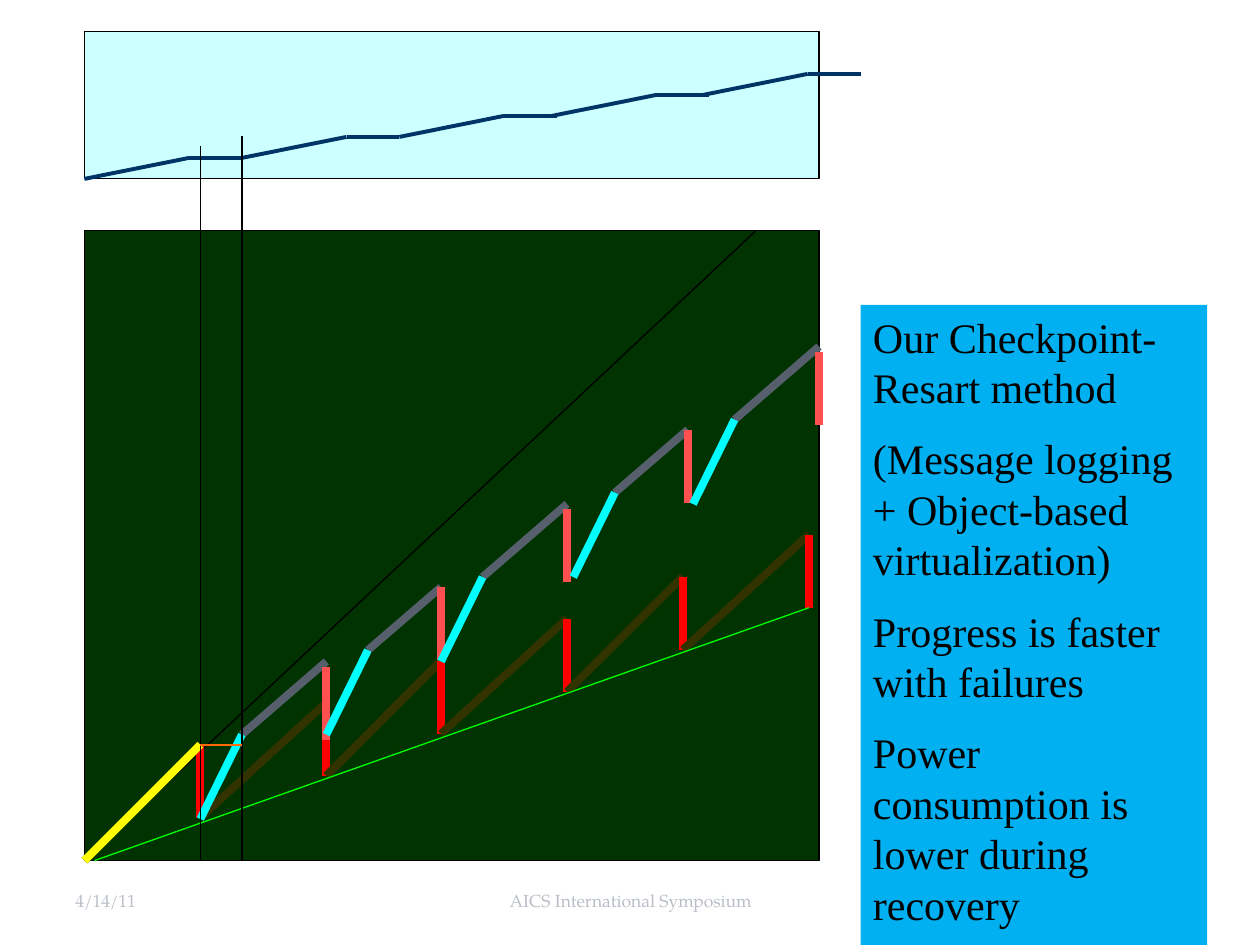
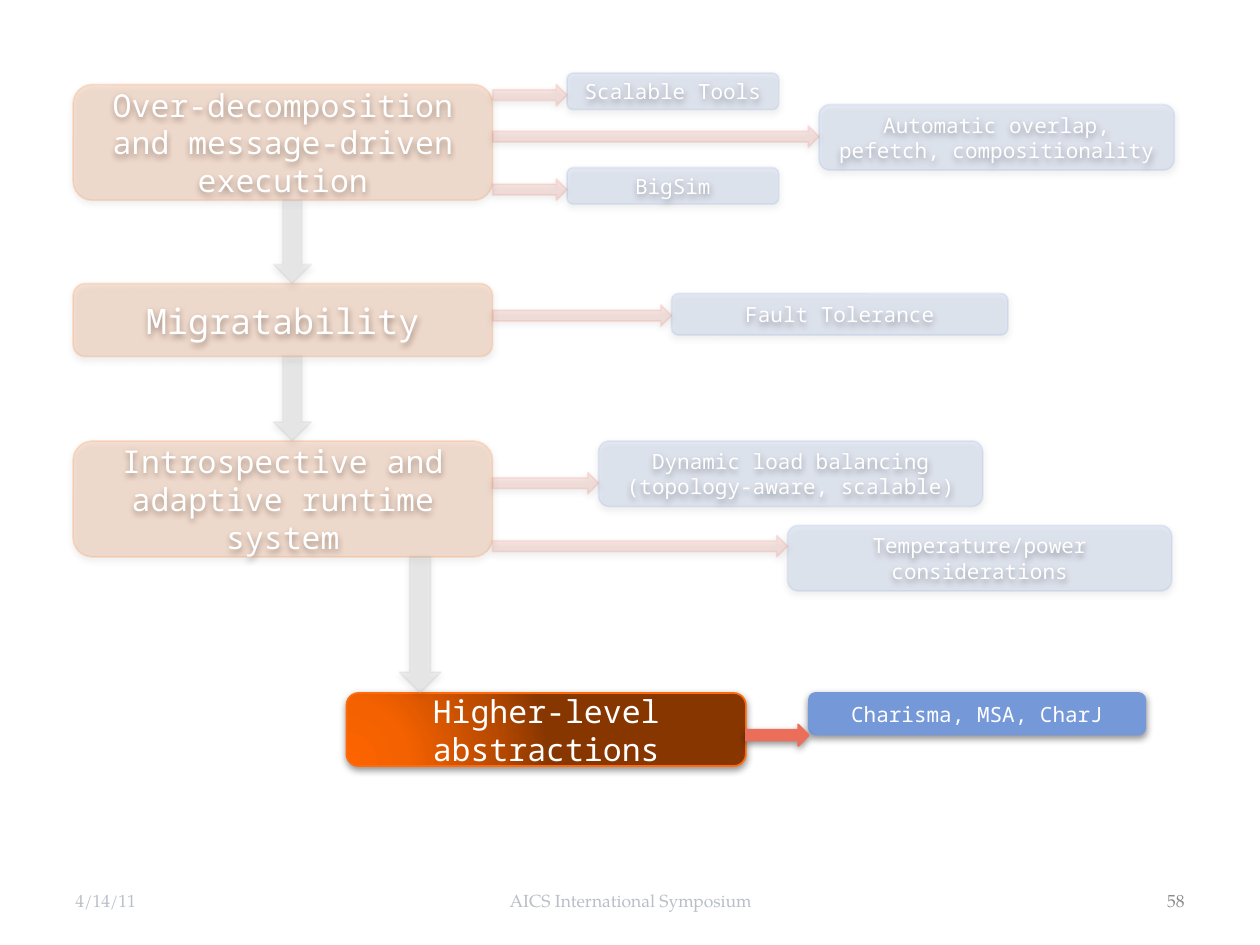
from collections import namedtuple

from lxml import etree
from pptx import Presentation
from pptx.dml.color import RGBColor
from pptx.enum.shapes import MSO_CONNECTOR, MSO_SHAPE
from pptx.enum.text import MSO_ANCHOR, MSO_AUTO_SIZE, PP_ALIGN
from pptx.oxml.ns import qn
from pptx.util import Inches, Pt

STRAIGHT = MSO_CONNECTOR.STRAIGHT
RECTANGLE = MSO_SHAPE.RECTANGLE
ROUNDED = MSO_SHAPE.ROUNDED_RECTANGLE
DOWN_ARROW, RIGHT_ARROW = MSO_SHAPE.DOWN_ARROW, MSO_SHAPE.RIGHT_ARROW
LEFT, CENTER, RIGHT = PP_ALIGN.LEFT, PP_ALIGN.CENTER, PP_ALIGN.RIGHT
TOP, MIDDLE = MSO_ANCHOR.TOP, MSO_ANCHOR.MIDDLE
GROW = MSO_AUTO_SIZE.SHAPE_TO_FIT_TEXT

COLORS = {
    "black": "000000", "white": "FFFFFF", "footer": "B9BEC7", "number": "8C8C8C",
    "field": "003300", "sky": "CCFFFF", "power": "003366", "note": "00B0F0",
    "lost work": "333300", "failure": "FF0000", "trend": "00FF00",
    "first run": "FFFF00", "recovery": "00FFFF", "progress": "575F6D",
    "fast failure": "FF5050", "orange": "FF6B0A", "stage": "E75C01",
    "topic": "7598D9", "next": "ADB0B5", "branch": "EB6E5A",
}
MONO, PAGELLA, TIMES = "Noto Sans Mono", "TeX Gyre Pagella", "Times New Roman"
FADED = 15
SHADOW = {"blurRad": Pt(4), "dist": Pt(1.6), "dir": 90 * 60000, "rotWithShape": 0}
HIGHLIGHT_STOPS = [(0, "FD6400"), (30, "F46100"), (75, "B74900"), (100, "873600")]
HIGHLIGHT_CENTER = {"l": 5, "t": 100, "r": 120, "b": 10}

Box = namedtuple("Box", "left top width height")
Topic = namedtuple("Topic", "text arrow_top box")
Stage = namedtuple("Stage", "text size box topics")

PROGRESS_BOX = Box(0.67, 1.83, 5.83, 5)
POWER_BOX = Box(0.67, 0.25, 5.83, 1.17)
NOTE_BOX = Box(6.83, 2.42, 2.75, 5.09)
DIAGRAM_BOX = Box(0.58, 0.58, 8.74, 5.5)

NOTES = [
    "Our Checkpoint-Resart method",
    "(Message logging + Object-based virtualization)",
    "Progress is faster with failures",
    "Power consumption is lower during recovery",
]
DROP = 0.58
FAILURE_TIMES = [0.92, 1.92, 2.83, 3.83, 4.75, 5.75]
# start time, start height, peak time, peak height, gap below the peak
FAST_CYCLES = [
    (0.92, 0.33, 1.92, 1.58, 0.04),
    (1.92, 1.00, 2.83, 2.17, 0),
    (2.83, 1.58, 3.83, 2.83, 0.04),
    (3.88, 2.25, 4.79, 3.42, 0),
    (4.83, 2.83, 5.83, 4.08, 0.04),
]
POWER_STARTS = [0, 1.25, 2.5, 3.71, 4.91]

# Boxes and arrow tops are measured from the corner of the diagram.
STAGES = [
    Stage("Over-decomposition and message-driven execution", 18,
          Box(0, 0.09, 3.33, 0.92), [
              Topic("Scalable Tools", 0.09, Box(3.92, 0, 1.68, 0.29)),
              Topic("Automatic overlap, pefetch, compositionality", 0.42,
                    Box(5.92, 0.25, 2.82, 0.52)),
              Topic("BigSim", 0.84, Box(3.92, 0.75, 1.68, 0.29))]),
    Stage("Migratability", 20, Box(0, 1.67, 3.33, 0.58), [
        Topic("Fault Tolerance", 1.84, Box(4.75, 1.75, 2.67, 0.33))]),
    Stage("Introspective and adaptive runtime system", 18,
          Box(0, 2.92, 3.33, 0.92), [
              Topic("Dynamic load balancing (topology-aware, scalable)", 3.17,
                    Box(4.17, 2.92, 3.05, 0.52)),
              Topic("Temperature/power considerations", 3.67,
                    Box(5.67, 3.59, 3.05, 0.52))]),
    Stage("Higher-level abstractions", 18, Box(2.17, 4.92, 3.17, 0.58), [
        Topic("Charisma, MSA, CharJ", 5.17, Box(5.84, 4.92, 2.67, 0.33))]),
]
NEXT_ARROWS = [(1.59, 0.3), (1.59, 0.3), (2.59, 0.33)]


def rgb(name):
    return RGBColor.from_string(COLORS[name])


def in_inches(box):
    return [Inches(length) for length in box]


def shifted(box, outer):
    return box._replace(left=outer.left + box.left, top=outer.top + box.top)


def add_element(parent, tag, **values):
    child = etree.SubElement(parent, qn(tag))
    for name, value in values.items():
        child.set(name, str(value))
    return child


def write(shape, texts, color, font, align=LEFT, anchor=MIDDLE, gap=0):
    frame = shape.text_frame
    frame.word_wrap = True
    frame.vertical_anchor = anchor
    for index, text in enumerate(texts):
        para = frame.paragraphs[0] if index == 0 else frame.add_paragraph()
        para.alignment = align
        if index:
            para.space_before = Pt(gap)
        span = para.add_run()
        span.text = text
        for name, value in font.items():
            setattr(span.font, name, value)
        span.font.color.rgb = rgb(color)


def add_block(page, kind, box, fill, line=None, weight=0.75):
    shape = page.shapes.add_shape(kind, *in_inches(box))
    shape.shadow.inherit = False
    shape.fill.solid()
    shape.fill.fore_color.rgb = rgb(fill)
    if line:
        shape.line.color.rgb = rgb(line)
        shape.line.width = Pt(weight)
    else:
        shape.line.fill.background()
    return shape


def plotter(page, box):
    """Return a function that draws lines between points measured from the
    lower left corner of the box, with heights counted upwards."""
    def place(point):
        across, up = point
        return Inches(box.left + across), Inches(box.top + box.height - up)

    def draw(start, end, color, weight):
        line = page.shapes.add_connector(STRAIGHT, *place(start), *place(end))
        line.line.color.rgb = rgb(color)
        line.line.width = Pt(weight)
        add_element(line.element.spPr, "a:effectLst")
    return draw


def add_progress(page, box):
    add_block(page, RECTANGLE, box, "field", "black")
    draw = plotter(page, box)
    draw((0, 0), (5.33, box.height), "black", 0.75)
    start = (0, 0)
    for index, time in enumerate(FAILURE_TIMES):
        peak = 0.92 + index / 3
        draw(start, (time, peak), "lost work", 4.5)
        start = (time, peak - DROP)
        draw(start, (time, peak), "failure", 4.5)
    draw((0.08, 0), start, "trend", 0.75)
    draw((0, 0), (0.92, 0.92), "first run", 4.5)
    for begin, low, end, high, gap in FAST_CYCLES:
        recovered = (begin + 0.33, low + 0.67)
        draw(recovered, (end, high), "progress", 4.5)
        draw((end, high - gap - DROP), (end, high - gap), "fast failure", 4.5)
        draw((begin, low), recovered, "recovery", 4.5)


def add_power(page, box):
    add_block(page, RECTANGLE, box, "sky", "black")
    draw = plotter(page, box)
    for index, start in enumerate(POWER_STARTS):
        low, high = index / 6, (index + 1) / 6
        draw((start, low), (start + 0.83, high), "power", 2.25)
        draw((start + 0.83, high), (start + 1.25, high), "power", 2.25)


def add_recovery_guides(page, box):
    draw = plotter(page, box)
    for time, height in [(0.92, 5.67), (1.25, 5.75)]:
        draw((time, 0), (time, height), "black", 0.75)
    draw((0.92, 0.92), (1.25, 0.92), "orange", 1)


def add_note(page, box):
    note = add_block(page, RECTANGLE, box, "note")
    write(note, NOTES, "black", {"size": Pt(24), "name": TIMES}, anchor=TOP, gap=12)
    note.text_frame.auto_size = GROW


def add_footer(page, number=None):
    entries = [("4/14/11", 0.5, 2.33, LEFT, "footer"),
               ("AICS International Symposium", 3.42, 3.17, CENTER, "footer")]
    if number:
        entries.append((number, 7.17, 2.33, RIGHT, "number"))
    for text, left, width, align, color in entries:
        label = page.shapes.add_textbox(*in_inches(Box(left, 6.95, width, 0.4)))
        write(label, [text], color, {"size": Pt(10), "name": PAGELLA}, align)


def add_soft_block(page, kind, box, fill, line, opacity):
    """Add a block with a soft shadow, faded to the given percentage."""
    shape = add_block(page, kind, box, fill, line, 1)
    properties = shape.element.spPr
    if opacity < 100:
        for color in properties.iter(qn("a:srgbClr")):
            add_element(color, "a:alpha", val=opacity * 1000)
    effects = properties.find(qn("a:effectLst"))
    shadow = add_element(effects, "a:outerShdw", **SHADOW)
    color = add_element(shadow, "a:srgbClr", val=COLORS["black"])
    add_element(color, "a:alpha", val=42000)
    return shape


def fill_with_glow(shape):
    """Replace the solid fill with a circular gradient."""
    properties = shape.element.spPr
    gradient = etree.Element(qn("a:gradFill"), rotWithShape="1")
    stops = add_element(gradient, "a:gsLst")
    for position, color in HIGHLIGHT_STOPS:
        stop = add_element(stops, "a:gs", pos=position * 1000)
        add_element(stop, "a:srgbClr", val=color)
    circle = add_element(gradient, "a:path", path="circle")
    edges = {side: part * 1000 for side, part in HIGHLIGHT_CENTER.items()}
    add_element(circle, "a:fillToRect", **edges)
    properties.replace(properties.find(qn("a:solidFill")), gradient)


def add_stage(page, stage, outer, opacity):
    shape = add_soft_block(page, ROUNDED, shifted(stage.box, outer),
                           "stage", "orange", opacity)
    write(shape, [stage.text], "white", {"size": Pt(stage.size), "name": MONO}, CENTER)
    if opacity == 100:
        fill_with_glow(shape)
    right = stage.box.left + stage.box.width
    for topic in stage.topics:
        label = add_soft_block(page, ROUNDED, shifted(topic.box, outer),
                               "topic", "topic", opacity)
        write(label, [topic.text], "white", {"size": Pt(12), "name": MONO}, CENTER)
        arrow = Box(right, topic.arrow_top, topic.box.left - right, 0.17)
        add_soft_block(page, RIGHT_ARROW, shifted(arrow, outer),
                       "branch", "branch", opacity)


def add_diagram(page, box):
    for stage in STAGES:
        add_stage(page, stage, box, 100 if stage is STAGES[-1] else FADED)
    for (left, width), upper, lower in zip(NEXT_ARROWS, STAGES, STAGES[1:]):
        bottom = upper.box.top + upper.box.height
        arrow = Box(left, bottom, width, lower.box.top - bottom)
        add_soft_block(page, DOWN_ARROW, shifted(arrow, box), "next", "next", FADED)


def main():
    deck = Presentation()
    deck.slide_width, deck.slide_height = Inches(10), Inches(7.5)
    blank = deck.slide_layouts[6]

    page = deck.slides.add_slide(blank)
    add_progress(page, PROGRESS_BOX)
    add_power(page, POWER_BOX)
    add_recovery_guides(page, PROGRESS_BOX)
    add_note(page, NOTE_BOX)
    add_footer(page)

    page = deck.slides.add_slide(blank)
    add_diagram(page, DIAGRAM_BOX)
    add_footer(page, "58")

    deck.save("out.pptx")


if __name__ == "__main__":
    main()
